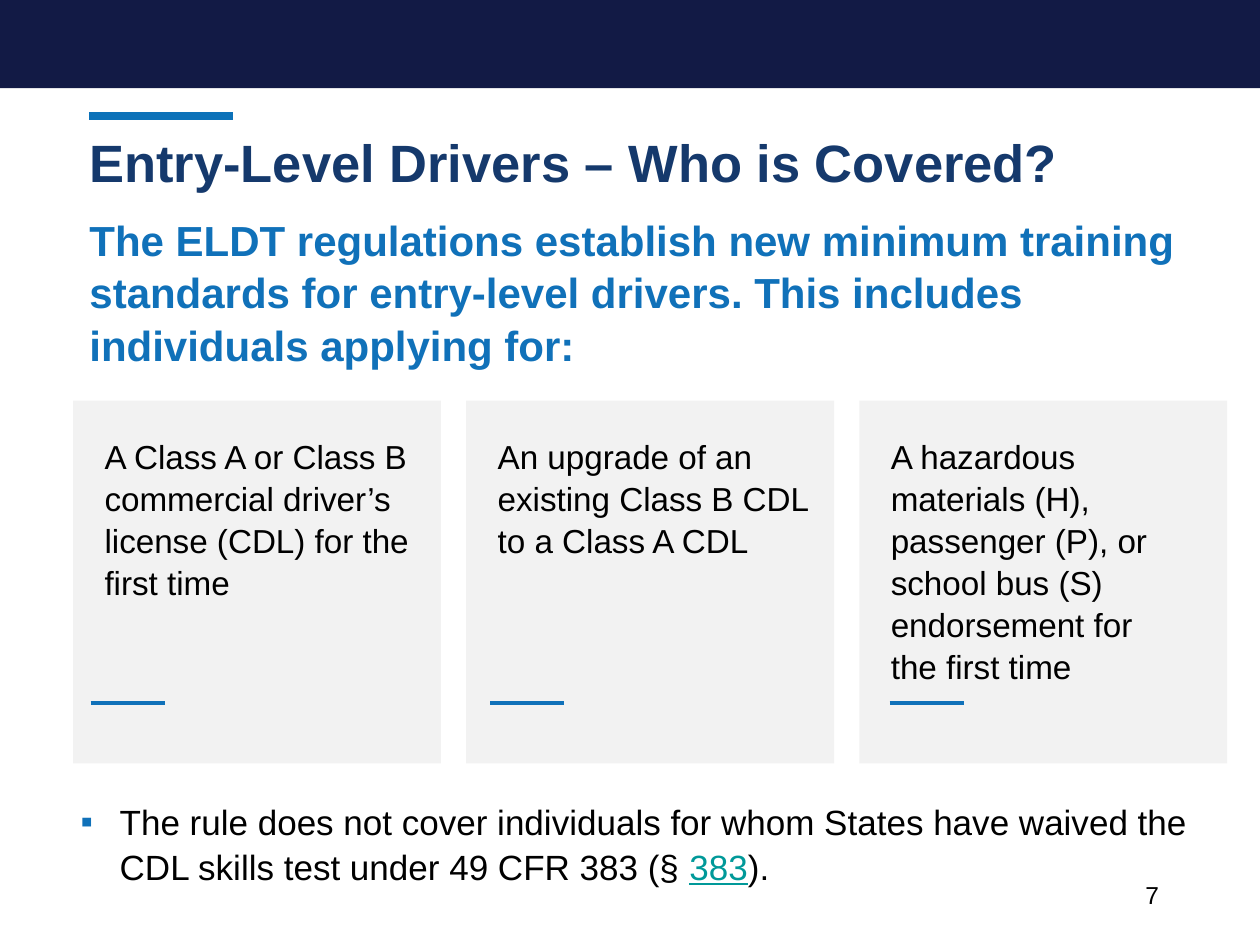
from dataclasses import dataclass

from lxml.etree import SubElement
from pptx import Presentation
from pptx.dml.color import RGBColor
from pptx.enum.shapes import MSO_CONNECTOR, MSO_SHAPE
from pptx.enum.text import MSO_ANCHOR, PP_ALIGN
from pptx.oxml.ns import qn
from pptx.util import Inches, Pt


@dataclass(frozen=True)
class Theme:
    font: str = "Arial"
    banner: str = "121A45"
    accent: str = "0C72B9"
    title: str = "15396C"
    blue: str = "1071B9"
    card: str = "F2F2F2"
    ink: str = "000000"
    link: str = "009999"
    title_size: int = 30
    lead_size: int = 24
    note_size: int = 20
    card_size: int = 19
    number_size: int = 14


def add_bullet(paragraph, symbol, color, indent):
    properties = paragraph._p.get_or_add_pPr()
    properties.set("marL", str(Inches(indent)))
    properties.set("indent", str(-Inches(indent)))
    bullet_color = SubElement(properties, qn("a:buClr"))
    SubElement(bullet_color, qn("a:srgbClr"), val=color)
    SubElement(properties, qn("a:buFont"), typeface="Arial")
    SubElement(properties, qn("a:buChar"), char=symbol)


def write(frame, text, *, font, size, color, bold=False, spacing=1.05,
          insets=(0, 0, 0, 0), bullet=None, linked=None, link_color=None):
    frame.word_wrap = True
    frame.vertical_anchor = MSO_ANCHOR.TOP
    (frame.margin_left, frame.margin_top,
     frame.margin_right, frame.margin_bottom) = map(Inches, insets)
    paragraph = frame.paragraphs[0]
    paragraph.alignment = PP_ALIGN.LEFT
    paragraph.line_spacing = spacing
    if bullet:
        add_bullet(paragraph, *bullet)
    before, link, after = text.rpartition(linked) if linked else (text, "", "")
    for part in filter(None, (before, link, after)):
        for number, line in enumerate(part.split("\n")):
            if number:
                paragraph.add_line_break()
            run = paragraph.add_run()
            run.text = line
            run.font.name = font
            run.font.size = Pt(size)
            run.font.bold = bold
            is_link = part == linked
            run.font.underline = is_link
            run.font.color.rgb = RGBColor.from_string(link_color if is_link else color)


class SlideBuilder:
    def __init__(self, slide, theme):
        self.slide = slide
        self.theme = theme

    def panel(self, left, top, width, height, color):
        panel = self.slide.shapes.add_shape(
            MSO_SHAPE.RECTANGLE, *map(Inches, (left, top, width, height)))
        panel.shadow.inherit = False
        panel.fill.solid()
        panel.fill.fore_color.rgb = RGBColor.from_string(color)
        panel.line.fill.background()
        return panel

    def card(self, left, top, width, height, text):
        card = self.panel(left, top, width, height, self.theme.card)
        write(card.text_frame, text, font=self.theme.font, size=self.theme.card_size,
              color=self.theme.ink, insets=(0.25, 0.27, 0.1, 0.05))

    def rule(self, left, top, length, color, weight):
        rule = self.slide.shapes.add_connector(
            MSO_CONNECTOR.STRAIGHT, *map(Inches, (left, top, left + length, top)))
        rule.line.color.rgb = RGBColor.from_string(color)
        rule.line.width = Pt(weight)
        SubElement(rule._element.spPr, qn("a:effectLst"))

    def text(self, left, top, width, height, text, **style):
        box = self.slide.shapes.add_textbox(*map(Inches, (left, top, width, height)))
        write(box.text_frame, text, font=self.theme.font, **style)


def main():
    theme = Theme()
    deck = Presentation()
    deck.slide_width, deck.slide_height = Inches(10), Inches(7.5)
    builder = SlideBuilder(deck.slides.add_slide(deck.slide_layouts[6]), theme)

    builder.panel(0, 0, 10, 0.7, theme.banner)
    builder.rule(0.71, 0.92, 1.14, theme.accent, 4.5)
    builder.text(0.71, 1.13, 9.04, 0.54, "Entry-Level Drivers – Who is Covered?",
                 size=theme.title_size, color=theme.title, bold=True, spacing=Pt(29))
    builder.text(0.71, 1.68, 8.71, 1.4,
                 "The ELDT regulations establish new minimum training standards for "
                 "entry-level drivers. This includes individuals applying for:",
                 size=theme.lead_size, color=theme.blue, bold=True)
    builder.text(9.09, 6.95, 0.36, 0.47, "7", size=theme.number_size,
                 color=theme.ink, insets=(0, 0.02, 0, 0))
    builder.text(0.64, 6.34, 9.04, 0.67,
                 "The rule does not cover individuals for whom States have waived the "
                 "CDL skills test under 49 CFR 383 (§ 383).",
                 size=theme.note_size, color=theme.ink, bullet=("▪", theme.blue, 0.31),
                 linked="383", link_color=theme.link)

    applicants = (
        "A Class A or Class B commercial driver’s license (CDL) for the first time",
        "An upgrade of an existing Class B CDL to a Class A CDL",
        "A hazardous materials (H), passenger (P), or school bus (S) "
        "endorsement for \nthe first time",
    )
    for column, applicant in enumerate(applicants):
        builder.card(0.58 + 3.12 * column, 3.18, 2.92, 2.88, applicant)
        builder.rule(0.72 + 3.17 * column, 5.58, 0.59, theme.blue, 2.25)

    deck.save("out.pptx")


if __name__ == "__main__":
    main()
